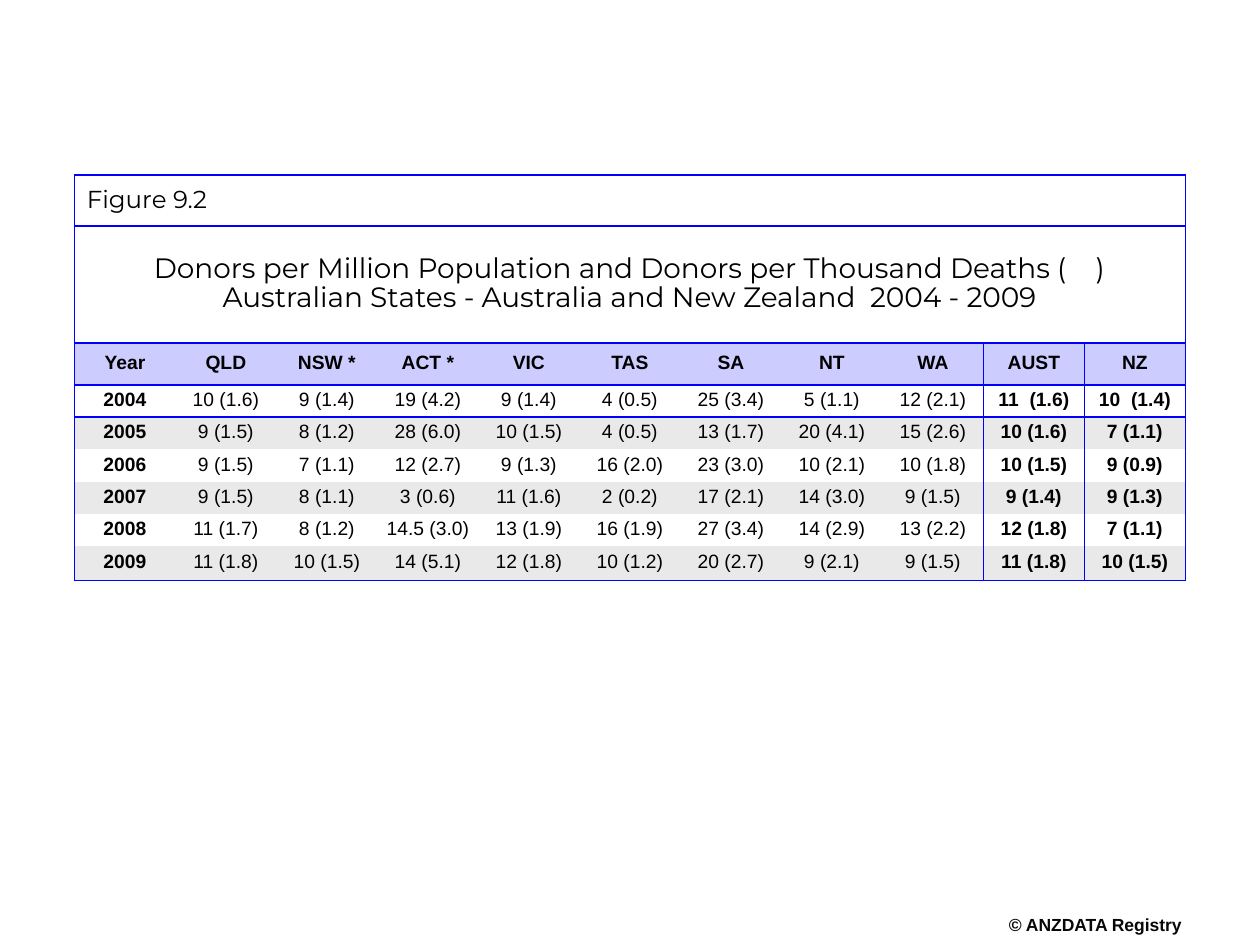
from lxml import etree
from pptx import Presentation
from pptx.dml.color import RGBColor
from pptx.enum.text import MSO_ANCHOR, MSO_AUTO_SIZE, PP_ALIGN
from pptx.oxml.ns import qn
from pptx.util import Cm, Pt

LEFT, CENTER = PP_ALIGN.LEFT, PP_ALIGN.CENTER
MIDDLE = MSO_ANCHOR.MIDDLE
FIT_SHAPE = MSO_AUTO_SIZE.SHAPE_TO_FIT_TEXT
COLORS = {"text": "000000", "footer": "080808", "border": "0000FF",
          "header": "CCCCFF", "band": "E9E9E9"}
NO_STYLE_NO_GRID = "{2D5ABB26-0587-4C30-8999-92F81FD0307C}"

FIGURE = "Figure 9.2"
TITLE = [
    "Donors per Million Population and Donors per Thousand Deaths (    )",
    "Australian States - Australia and New Zealand  2004 - 2009",
]
DONORS = [
    ["Year", "QLD", "NSW *", "ACT *", "VIC", "TAS", "SA", "NT", "WA", "AUST", "NZ"],
    ["2004", "10 (1.6)", "9 (1.4)", "19 (4.2)", "9 (1.4)", "4 (0.5)",
     "25 (3.4)", "5 (1.1)", "12 (2.1)", "11  (1.6)", "10  (1.4)"],
    ["2005", "9 (1.5)", "8 (1.2)", "28 (6.0)", "10 (1.5)", "4 (0.5)",
     "13 (1.7)", "20 (4.1)", "15 (2.6)", "10 (1.6)", "7 (1.1)"],
    ["2006", "9 (1.5)", "7 (1.1)", "12 (2.7)", "9 (1.3)", "16 (2.0)",
     "23 (3.0)", "10 (2.1)", "10 (1.8)", "10 (1.5)", "9 (0.9)"],
    ["2007", "9 (1.5)", "8 (1.1)", "3 (0.6)", "11 (1.6)", "2 (0.2)",
     "17 (2.1)", "14 (3.0)", "9 (1.5)", "9 (1.4)", "9 (1.3)"],
    ["2008", "11 (1.7)", "8 (1.2)", "14.5 (3.0)", "13 (1.9)", "16 (1.9)",
     "27 (3.4)", "14 (2.9)", "13 (2.2)", "12 (1.8)", "7 (1.1)"],
    ["2009", "11 (1.8)", "10 (1.5)", "14 (5.1)", "12 (1.8)", "10 (1.2)",
     "20 (2.7)", "9 (2.1)", "9 (1.5)", "11 (1.8)", "10 (1.5)"],
]
ROW_HEIGHTS = [1.03, 2.35, 0.85] + [0.65] * 5 + [0.69]
COLUMN_COUNT = len(DONORS[0])
TABLE_WIDTH = 22.4


def write(text_frame, lines, size, font, bold=False, align=CENTER, color="text"):
    for index, line in enumerate(lines):
        paragraph = text_frame.paragraphs[0] if index == 0 else text_frame.add_paragraph()
        paragraph.alignment = align
        paragraph.line_spacing = 0.85
        run = paragraph.add_run()
        run.text = line
        run.font.size = Pt(size)
        run.font.name = font
        run.font.bold = bold
        run.font.color.rgb = RGBColor.from_string(COLORS[color])


def format_cell(cell, sides, margins, fill=None):
    """Set borders on the given sides (in L, R, T, B order), margins and fill."""
    cell.vertical_anchor = MIDDLE
    cell.margin_left, cell.margin_right = Cm(margins[0]), Cm(margins[0])
    cell.margin_top, cell.margin_bottom = Cm(margins[1]), Cm(margins[1])
    properties = cell._tc.get_or_add_tcPr()
    for side in sides:
        line = etree.SubElement(properties, qn(f"a:ln{side}"), w=str(Pt(1)))
        solid = etree.SubElement(line, qn("a:solidFill"))
        etree.SubElement(solid, qn("a:srgbClr"), val=COLORS["border"])
    if fill:
        cell.fill.solid()
        cell.fill.fore_color.rgb = RGBColor.from_string(COLORS[fill])
    else:
        cell.fill.background()


presentation = Presentation()
presentation.slide_width, presentation.slide_height = Cm(25.4), Cm(19.05)
slide = presentation.slides.add_slide(presentation.slide_layouts[6])

# Copyright line
footer = slide.shapes.add_textbox(Cm(20.29), Cm(18.49), Cm(3.58), Cm(0.43))
frame = footer.text_frame
frame.margin_left = frame.margin_right = frame.margin_top = frame.margin_bottom = 0
frame.word_wrap = False
frame.auto_size = FIT_SHAPE
write(frame, ["© ANZDATA Registry"], 10, "Arial", bold=True, color="footer")

# Table grid
table = slide.shapes.add_table(
    len(ROW_HEIGHTS), COLUMN_COUNT, Cm(1.5), Cm(3.53),
    Cm(TABLE_WIDTH), Cm(sum(ROW_HEIGHTS))).table
table.first_row = table.horz_banding = False
table._tbl.tblPr.find(qn("a:tableStyleId")).text = NO_STYLE_NO_GRID
for column in table.columns:
    column.width = Cm(TABLE_WIDTH / COLUMN_COUNT)
for row, height in zip(table.rows, ROW_HEIGHTS):
    row.height = Cm(height)

# Figure number and title across the full width
for row_index in range(2):
    table.cell(row_index, 0).merge(table.cell(row_index, COLUMN_COUNT - 1))
figure_cell, title_cell = table.cell(0, 0), table.cell(1, 0)
format_cell(figure_cell, "LRTB", (0.25, 0.05))
write(figure_cell.text_frame, [FIGURE], 14, "Montserrat", align=LEFT)
format_cell(title_cell, "LRTB", (0.2, 0.2))
write(title_cell.text_frame, TITLE, 16, "Montserrat")

# Header and yearly values; the last two columns are national totals
first_total = COLUMN_COUNT - 2
for row_index, values in enumerate(DONORS):
    is_header = row_index == 0
    fill = "header" if is_header else "band" if row_index % 2 == 0 else None
    for column_index, value in enumerate(values):
        is_total = column_index >= first_total
        sides = ""
        if column_index == 0 or is_total:
            sides += "L"
        if column_index >= first_total - 1:
            sides += "R"
        if row_index <= 1:
            sides += "T"
        if is_header or row_index == len(DONORS) - 1:
            sides += "B"
        cell = table.cell(row_index + 2, column_index)
        format_cell(cell, sides, (0.1, 0.1 if is_header else 0.05), fill)
        write(cell.text_frame, [value], 11, "Arial",
              bold=is_header or is_total or column_index == 0)

presentation.save("out.pptx")
